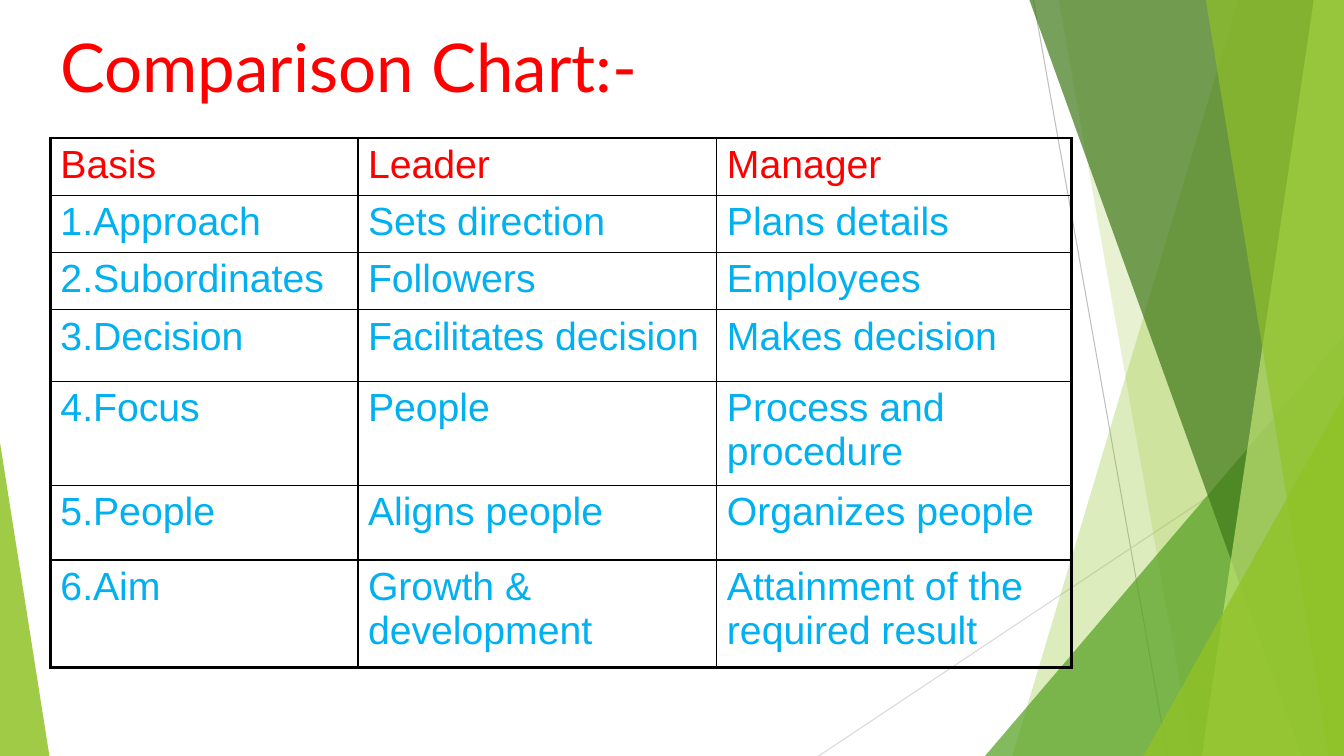
from lxml import etree
from pptx import Presentation
from pptx.dml.color import RGBColor
from pptx.enum.shapes import MSO_CONNECTOR, MSO_SHAPE
from pptx.enum.text import MSO_ANCHOR
from pptx.oxml.ns import qn
from pptx.util import Inches, Pt

STRAIGHT = MSO_CONNECTOR.STRAIGHT
TRIANGLE = MSO_SHAPE.ISOSCELES_TRIANGLE
TOP = MSO_ANCHOR.TOP

RED = RGBColor(0xFF, 0x00, 0x00)
SKY = RGBColor(0x00, 0xB0, 0xF0)
BLACK = RGBColor(0x00, 0x00, 0x00)
GREY = RGBColor(0xBF, 0xBF, 0xBF)
PALE_GREY = RGBColor(0xD9, 0xD9, 0xD9)
LIME = RGBColor(0x90, 0xC2, 0x26)
GREEN = RGBColor(0x54, 0xA0, 0x21)
DARK_GREEN = RGBColor(0x3F, 0x78, 0x19)
LIGHT_LIME = RGBColor(0xC0, 0xE4, 0x74)

SLIDE_W, SLIDE_H = 13.33, 7.5
LEFT, CONTENT_W = 0.5, 10.12

TITLE = "Comparison Chart:-"
COMPARISON = [
    ("Basis", "Leader", "Manager"),
    ("1.Approach", "Sets direction", "Plans details"),
    ("2.Subordinates", "Followers", "Employees"),
    ("3.Decision", "Facilitates decision", "Makes decision"),
    ("4.Focus", "People", "Process and procedure"),
    ("5.People", "Aligns people", "Organizes people"),
    ("6.Aim", "Growth & development", "Attainment of the required result"),
]
COL_WIDTHS = [3.05, 3.56, 3.52]
ROW_HEIGHTS = [0.54, 0.54, 0.54, 0.71, 0.99, 0.74, 1.07]
TABLE_TOP = 1.37
OUTER_PT, INNER_PT = 2.25, 1

# start x, start y, end x, end y, colour
RAYS = [
    (10.25, 0, 11.58, SLIDE_H, GREY),
    (SLIDE_W, 4.03, 8.12, SLIDE_H, PALE_GREY),
]
# Bands run from their slanted left edge to the right edge of the slide:
# ("band", top x, bottom x, colour, opacity %)
# Wedges stand on the bottom edge of the slide:
# ("wedge", left, width, height, apex position, colour, opacity %)
FACETS = [
    ("band", 12.28, 10.04, LIME, 30),
    ("band", 10.5, 11.83, LIME, 20),
    ("wedge", 9.77, 3.56, 4.17, 1, GREEN, 72),
    ("band", 10.21, 12.91, DARK_GREEN, 70),
    ("band", 13.03, 11.92, LIGHT_LIME, 70),
    ("band", 11.96, 13.18, LIME, 65),
    ("wedge", 11.34, 1.99, 3.57, 1, LIME, 80),
    ("wedge", 0, 0.49, 3.11, 0, LIME, 85),
]


def add_ray(shapes, x1, y1, x2, y2, color):
    ray = shapes.add_connector(STRAIGHT, Inches(x1), Inches(y1), Inches(x2), Inches(y2))
    ray.line.color.rgb = color
    ray.line.width = Pt(0.75)
    etree.SubElement(ray._element.spPr, qn("a:effectLst"))


def add_band(shapes, top_x, bottom_x):
    outline = shapes.build_freeform(Inches(top_x), 0)
    corners = [(SLIDE_W, 0), (SLIDE_W, SLIDE_H), (bottom_x, SLIDE_H)]
    outline.add_line_segments([(Inches(x), Inches(y)) for x, y in corners], close=True)
    return outline.convert_to_shape()


def add_wedge(shapes, left, width, height, apex):
    wedge = shapes.add_shape(TRIANGLE, Inches(left), Inches(SLIDE_H - height),
                             Inches(width), Inches(height))
    wedge.adjustments[0] = apex
    return wedge


def paint(facet, color, opacity):
    facet.shadow.inherit = False
    facet.line.fill.background()
    facet.fill.solid()
    facet.fill.fore_color.rgb = color
    srgb = facet._element.spPr.find(qn("a:solidFill")).find(qn("a:srgbClr"))
    etree.SubElement(srgb, qn("a:alpha"), val=str(opacity * 1000))


def write(frame, text, font_name, size, color):
    run = frame.paragraphs[0].add_run()
    run.text = text
    run.font.name = font_name
    run.font.size = Pt(size)
    run.font.color.rgb = color


def set_borders(cell, widths):
    """Draw black cell borders; widths maps L, R, T, B, in that order, to points."""
    properties = cell._tc.get_or_add_tcPr()
    for side, width in widths.items():
        border = etree.SubElement(properties, qn(f"a:ln{side}"), w=str(Pt(width)))
        fill = etree.SubElement(border, qn("a:solidFill"))
        etree.SubElement(fill, qn("a:srgbClr"), val=str(BLACK))


def add_comparison(shapes):
    last_row, last_col = len(COMPARISON) - 1, len(COL_WIDTHS) - 1
    table = shapes.add_table(
        len(COMPARISON), len(COL_WIDTHS), Inches(LEFT), Inches(TABLE_TOP),
        Inches(sum(COL_WIDTHS)), Inches(sum(ROW_HEIGHTS))).table
    table.first_row = False
    table.horz_banding = False
    for column, width in zip(table.columns, COL_WIDTHS):
        column.width = Inches(width)
    for row, height in zip(table.rows, ROW_HEIGHTS):
        row.height = Inches(height)
    for r, entries in enumerate(COMPARISON):
        for c, entry in enumerate(entries):
            cell = table.cell(r, c)
            on_edge = {"L": c == 0, "R": c == last_col, "T": r == 0, "B": r == last_row}
            set_borders(cell, {side: OUTER_PT if outer else INNER_PT
                               for side, outer in on_edge.items()})
            cell.fill.background()
            write(cell.text_frame, entry, "Arial", 28, RED if r == 0 else SKY)


def main():
    prs = Presentation()
    prs.slide_width, prs.slide_height = Inches(SLIDE_W), Inches(SLIDE_H)
    shapes = prs.slides.add_slide(prs.slide_layouts[6]).shapes

    for ray in RAYS:
        add_ray(shapes, *ray)
    builders = {"band": add_band, "wedge": add_wedge}
    for kind, *geometry, color, opacity in FACETS:
        paint(builders[kind](shapes, *geometry), color, opacity)

    title = shapes.add_textbox(Inches(LEFT), Inches(0.2), Inches(CONTENT_W), Inches(1.18))
    title.text_frame.word_wrap = True
    title.text_frame.vertical_anchor = TOP
    write(title.text_frame, TITLE, "Lato", 48, RED)

    add_comparison(shapes)
    prs.save("out.pptx")


if __name__ == "__main__":
    main()
